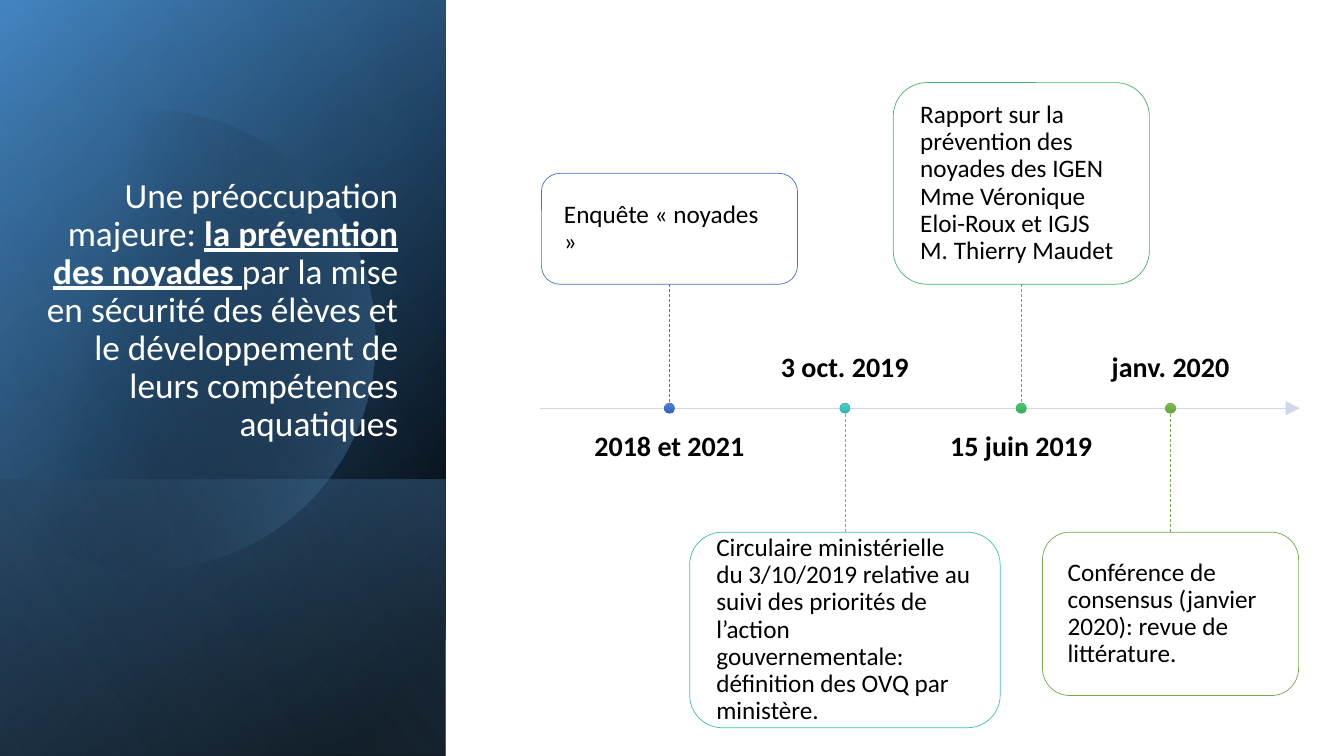
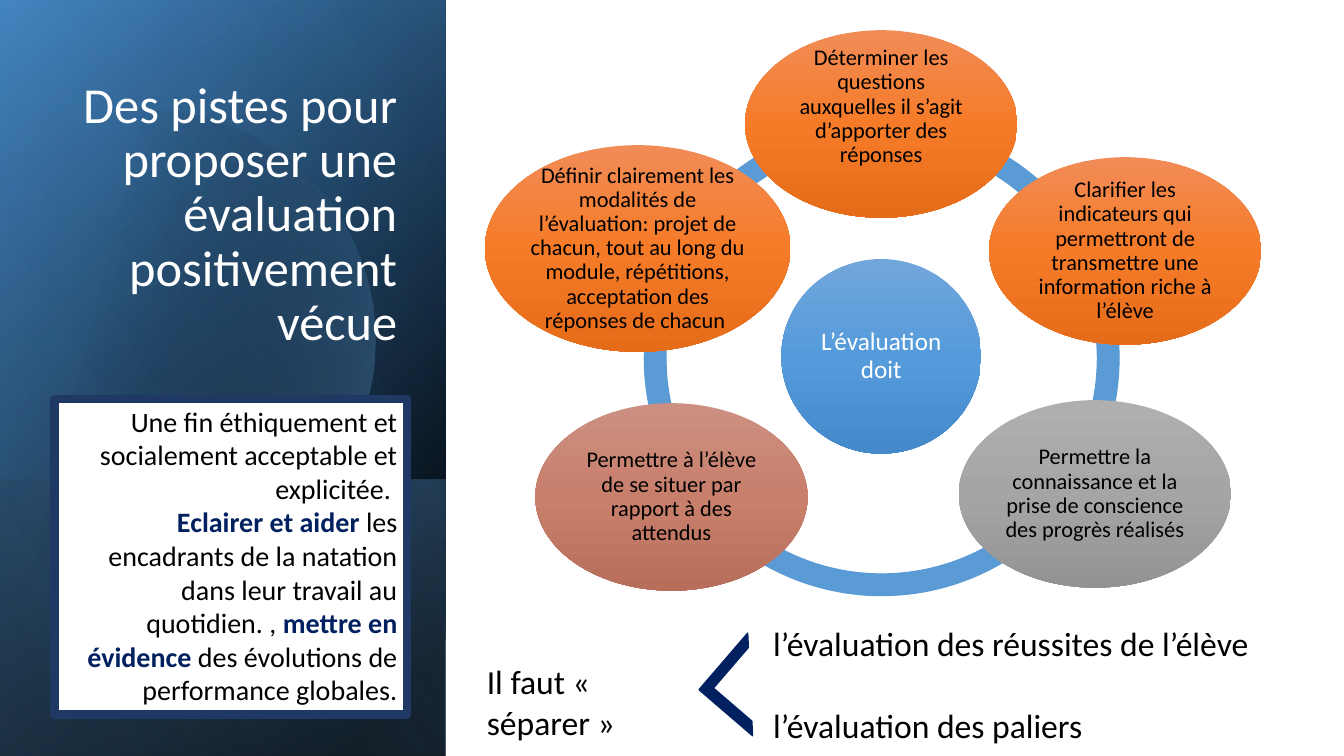
import math
from pptx import Presentation
from pptx import util as u
from pptx.dml.color import RGBColor
from pptx.enum import dml, shapes, text
from pptx.oxml import parse_xml
from pptx.oxml.ns import nsdecls, qn
from lxml import etree

PX = 9144
FONT = "Calibri"
BLACK, WHITE, NAVY = "000000", "FFFFFF", "002060"
SKY, PALE, EDGE, AXIS = "5B9BD5", "9DC3E6", "203864", "CFD5EA"
ORANGE = ("F18C57", "F67B28", "E56C19")
ROSE = ("CB9082", "C87F6C", "B76E5B")
GREY = ("AFAFAF", "A5A5A5", "939393")
BLUE = ("71A6DB", "559BDB", "448ACA")
KIND = shapes.MSO_SHAPE
ALIGN = text.PP_ALIGN
ANCHOR = text.MSO_ANCHOR
SIDE, HIGH = 442, 750
LINE_Y, TOP_Y, LOW_Y = 405, 282, 528

STEPS = [
    (664, 254, 110, True, "2018 et 2021", "Enquête « noyades »",
     "4472C4", ("6183CB", "3E70CA", "3062BB")),
    (838, 308, 194, False, "3 oct. 2019",
     "Circulaire ministérielle du 3/10/2019 relative au suivi des priorités de "
     "l’action gouvernementale: définition des OVQ par ministère.",
     "43BEB9", ("60C6C1", "3DC4BF", "30B5B0")),
    (1013, 254, 200, True, "15 juin 2019",
     "Rapport sur la prévention des noyades des IGEN Mme Véronique Eloi-Roux "
     "et IGJS M. Thierry Maudet",
     "45B664", ("60C077", "3FBC62", "33AC55")),
    (1161, 254, 162, False, "janv. 2020",
     "Conférence de consensus (janvier 2020): revue de littérature.",
     "70AD47", ("81B861", "6FB242", "62A336")),
]

GOALS = [
    (739, 30, 270, 186, ORANGE, (2, 2, 2, 36),
     "Déterminer les questions auxquelles il s’agit d’apporter des réponses"),
    (531, 400, 270, 186, ROSE, (2, 2, 2, 2),
     "Permettre à l’élève de se situer par rapport à des attendus"),
    (951, 397, 270, 186, GREY, (2, 2, 2, 2),
     "Permettre la connaissance et la prise de conscience des progrès réalisés"),
    (481, 144, 303, 205, ORANGE, (0, 0, 0, 0),
     "Définir clairement les modalités de l’évaluation: projet de chacun, tout au "
     "long du module, répétitions, acceptation des réponses de chacun "),
    (981, 156, 270, 186, ORANGE, (2, 2, 2, 2),
     "Clarifier les indicateurs qui permettront de transmettre une information "
     "riche à l’élève"),
]


def emu(*vals):
    return [u.Emu(v * PX) for v in vals]


def hue(code):
    return RGBColor.from_string(code)


def fade(shape, stops, angle):
    rows = "".join(
        f'<a:gs pos="{pos * 1000}"><a:srgbClr val="{hue(code)}">'
        f'<a:alpha val="{alpha * 1000}"/></a:srgbClr></a:gs>'
        for pos, code, alpha in stops)
    shape.element.spPr.insert(2, parse_xml(
        f'<a:gradFill {nsdecls("a")} rotWithShape="1"><a:gsLst>{rows}</a:gsLst>'
        f'<a:lin ang="{angle * 60000}" scaled="0"/></a:gradFill>'))


def sheen(shape, tones):
    fade(shape, [(pos, tone, 100) for pos, tone in zip((0, 50, 100), tones)], 90)


def dress(shape, fill=None, line=None, width=0.5):
    shape.shadow.inherit = False
    if fill:
        shape.fill.solid()
        shape.fill.fore_color.rgb = hue(fill)
    if line:
        shape.line.color.rgb = hue(line)
        shape.line.width = u.Pt(width)
    else:
        shape.line.fill.background()
    return shape


def form(slide, kind, box, **look):
    return dress(slide.shapes.add_shape(kind, *emu(*box)), **look)


def write(shape, paras, size, color=BLACK, align=ALIGN.LEFT, anchor=ANCHOR.TOP,
          inset=(10, 5, 10, 5), space=1.0, bold=False):
    frame = shape.text_frame
    frame.word_wrap = True
    frame.auto_size = text.MSO_AUTO_SIZE.NONE
    frame.vertical_anchor = anchor
    (frame.margin_left, frame.margin_top,
     frame.margin_right, frame.margin_bottom) = emu(*inset)
    for num, runs in enumerate(paras):
        para = frame.add_paragraph() if num else frame.paragraphs[0]
        para.alignment = align
        para.line_spacing = space
        para.space_before = para.space_after = u.Pt(0)
        for words, style in runs:
            run = para.add_run()
            run.text = words
            font = run.font
            font.name, font.size = FONT, u.Pt(size)
            font.bold = style.get("bold", bold)
            font.underline = style.get("under", False)
            font.color.rgb = hue(style.get("color", color))


def plain(words):
    return [[(words, {})]]


def label(slide, box, words, size, **look):
    write(slide.shapes.add_textbox(*emu(*box)), plain(words), size, **look)


def link(slide, start, end, color):
    line = slide.shapes.add_connector(
        shapes.MSO_CONNECTOR.STRAIGHT, *emu(*start, *end))
    line.line.color.rgb = hue(color)
    line.line.width = u.Pt(0.5)
    etree.SubElement(line.element.spPr, qn("a:effectLst"))
    return line


def slab(slide, top, tall, stops, angle):
    left = (SIDE - tall) // 2
    shape = form(slide, KIND.RECTANGLE, (left, top + (tall - SIDE) // 2, tall, SIDE))
    shape.rotation = 90
    shape.element.spPr.find(qn("a:xfrm")).set("flipH", "1")
    fade(shape, stops, angle)


def disc(slide):
    cx, cy, rad = 144, 337, 228
    edge = math.acos(-cx / rad)
    count = 120
    turns = [edge * (2 * num / count - 1) for num in range(count + 1)]
    dots = [(cx + rad * math.cos(a), cy + rad * math.sin(a)) for a in turns]
    path = slide.shapes.build_freeform(
        round(dots[0][0] * PX), round(dots[0][1] * PX))
    path.add_line_segments([(round(x * PX), round(y * PX)) for x, y in dots[1:]])
    fade(dress(path.convert_to_shape()),
         [(29, BLACK, 0), (100, SKY, 43)], 14)


def panel(slide):
    slab(slide, 0, HIGH, [(8, BLACK, 100), (100, "2E75B6", 100)], 50)
    slab(slide, 0, HIGH, [(0, BLACK, 0), (99, SKY, 46)], 30)
    slab(slide, 476, 274, [(2, SKY, 29), (100, BLACK, 30)], 130)
    disc(slide)
    slab(slide, 0, HIGH, [(0, BLACK, 0), (99, PALE, 11)], 120)


def start(deck, box, runs, size):
    slide = deck.slides.add_slide(deck.slide_layouts[5])
    panel(slide)
    title = slide.shapes.title
    title.left, title.top, title.width, title.height = emu(*box)
    write(title, [runs], size, WHITE, ALIGN.RIGHT, ANCHOR.BOTTOM, space=0.9)
    slide.shapes.element.append(title.element)
    return slide


def step(slide, mid, wide, tall, above, date, words, color, tones):
    top = TOP_Y - tall if above else LOW_Y
    card = form(slide, KIND.ROUNDED_RECTANGLE, (mid - wide // 2, top, wide, tall),
                fill=WHITE, line=color)
    write(card, plain(words), 18, anchor=ANCHOR.MIDDLE, inset=(17,) * 4, space=0.9)
    stem = link(slide, (mid, TOP_Y if above else LOW_Y), (mid, LINE_Y), color)
    stem.begin_connect(card, 2 if above else 0)
    stem.line.dash_style = dml.MSO_LINE.DASH
    dot = form(slide, KIND.OVAL, (mid - 5, LINE_Y - 5, 10, 10), line=color)
    sheen(dot, tones)
    label(slide, (mid - 112, 429 if above else 308, 224, 73), date, 20,
          align=ALIGN.CENTER, anchor=ANCHOR.TOP if above else ANCHOR.BOTTOM,
          inset=(0,) * 4, space=0.9, bold=True)


def oval(slide, box, tones, inset, words, size=16, color=BLACK):
    shape = form(slide, KIND.OVAL, box)
    sheen(shape, tones)
    write(shape, plain(words), size, color, ALIGN.CENTER, ANCHOR.MIDDLE, inset, 0.9)


def history(deck):
    slide = start(deck, (28, 137, 377, 309), [
        ("Une préoccupation majeure: ", {}),
        ("la prévention des noyades ", {"bold": True, "under": True}),
        ("par la mise en sécurité des élèves et le développement de leurs "
         "compétences aquatiques", {})], 25.2)
    axis = link(slide, (536, LINE_Y), (1289, LINE_Y), AXIS)
    tip = etree.SubElement(axis.line._get_or_add_ln(), qn("a:tailEnd"))
    for key, val in (("type", "triangle"), ("w", "lg"), ("len", "lg")):
        tip.set(key, val)
    for item in STEPS:
        step(slide, *item)


def review(deck):
    slide = start(deck, (54, 56, 350, 298), [
        ("Des pistes pour proposer une évaluation positivement vécue", {})], 36)
    for first, last in ((90, 162), (18, 90), (162, 18)):
        arc = form(slide, KIND.BLOCK_ARC, (639, 120, 471, 471),
                   fill=SKY, line=SKY, width=0.75)
        for num, val in enumerate((first * 0.6, last * 0.6, 0.046)):
            arc.adjustments[num] = val
    oval(slide, (775, 257, 198, 193), BLUE, (2,) * 4, "L’évaluation doit", 18, WHITE)
    for x, y, wide, tall, tones, inset, words in GOALS:
        oval(slide, (x, y, wide, tall), tones, inset, words)
    strong = {"bold": True, "color": NAVY}
    note = form(slide, KIND.RECTANGLE, (54, 396, 350, 313),
                fill=WHITE, line=EDGE, width=6)
    write(note, [
        [("Une fin éthiquement et socialement acceptable et explicitée. ", {})],
        [("Eclairer et aider ", strong),
         ("les encadrants de la natation dans leur travail au quotidien. , ", {}),
         ("mettre en évidence", strong),
         (" des évolutions de performance globales.", {})]], 20, align=ALIGN.RIGHT)
    label(slide, (473, 651, 220, 91), "Il faut « séparer »", 24)
    for top, words in ((613, "l’évaluation des réussites de l’élève"),
                       (694, "l’évaluation des paliers")):
        label(slide, (757, top, 494, 50), words, 24)
    hook = form(slide, KIND.HALF_FRAME, (707, 644, 74, 70),
                fill=NAVY, line=NAVY, width=1)
    hook.rotation = 310.7
    hook.adjustments[0], hook.adjustments[1] = 0.14, 0.15


def main():
    deck = Presentation()
    deck.slide_width, deck.slide_height = emu(1333, HIGH)
    history(deck)
    review(deck)
    deck.save("out.pptx")


if __name__ == "__main__":
    main()
